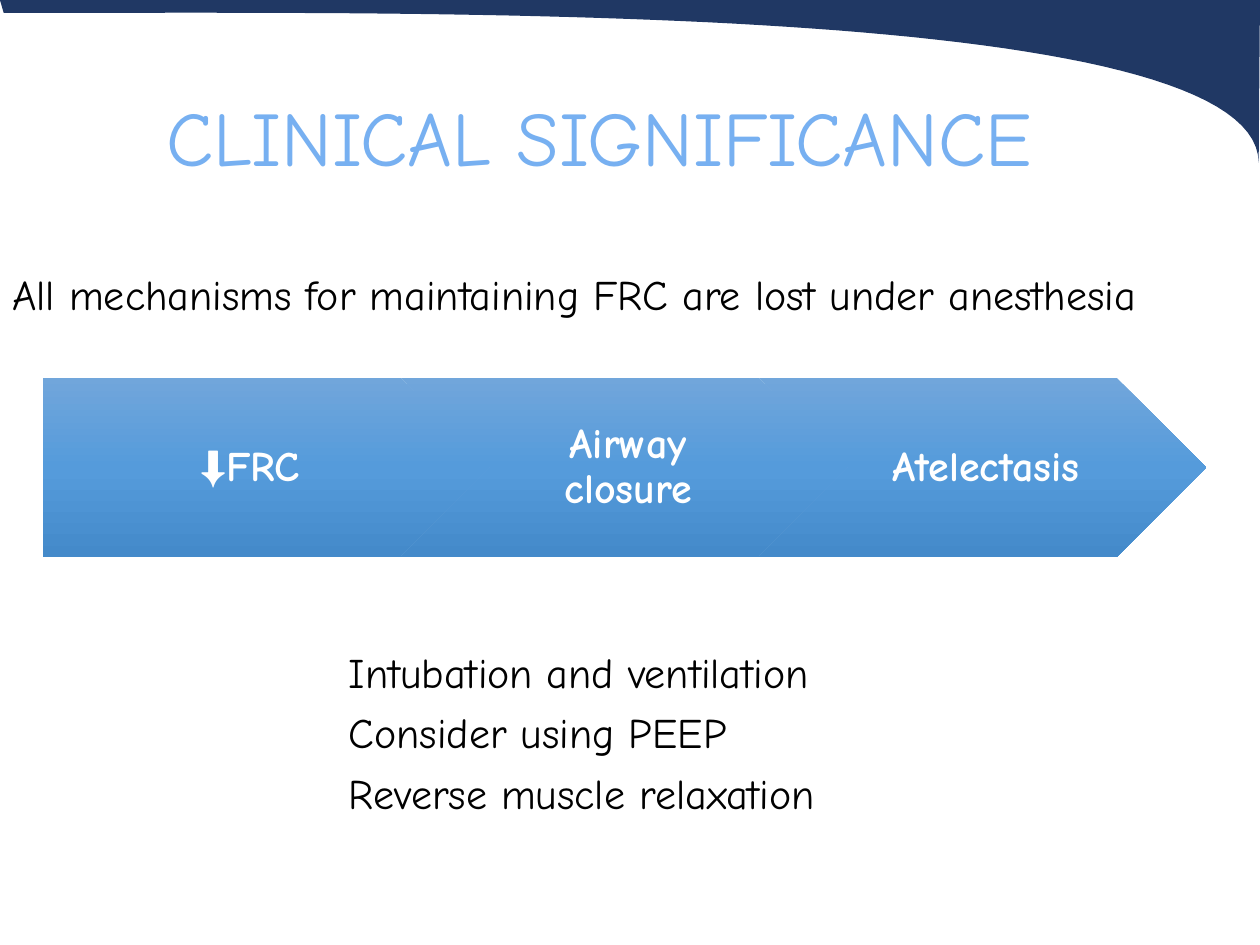
from copy import deepcopy

from pptx import Presentation
from pptx import util as u
from pptx.dml.color import RGBColor
from pptx.enum import shapes, text
from pptx.oxml.ns import qn

FONT = "Comic Neue"
NAVY, SKY, BLACK, WHITE = "203864", "77B0F1", "000000", "FFFFFF"
GRADIENT = [(0, "71A6DB"), (0.5, "559BDB"), (1, "448ACA")]


def colour(value):
    return RGBColor.from_string(value)


def set_attributes(target, values):
    for name, value in values.items():
        setattr(target, name, value)


def add_span(para, words, size, ink, font=FONT, bold=False):
    span = para.add_run()
    span.text = words
    set_attributes(span.font, {"name": font, "size": u.Pt(size), "bold": bold})
    span.font.color.rgb = colour(ink)


def add_lines(page, box, lines, size=24, ink=BLACK, spacing=1.0,
              anchor=text.MSO_ANCHOR.TOP):
    """Place left-aligned paragraphs in a text box."""
    frame = page.shapes.add_textbox(*map(u.Pt, box)).text_frame
    set_attributes(frame, {"word_wrap": True, "vertical_anchor": anchor})
    for index, line in enumerate(lines):
        para = frame.add_paragraph() if index else frame.paragraphs[0]
        para.line_spacing = spacing
        add_span(para, line, size, ink)
    return frame


def add_swoosh(page, box):
    """Draw the corner band, with its lower edge along a cubic curve."""
    left, top, width, height = box
    controls = [(0.999, 1), (0.998, 0), (0.336, 0.08), (0.003, 0.08)]
    steps = 60
    edge = []
    for step in range(steps + 1):
        t = step / steps
        weights = [(1 - t) ** 3, 3 * t * (1 - t) ** 2, 3 * t * t * (1 - t), t ** 3]
        x, y = (sum(w * point[axis] for w, point in zip(weights, controls))
                for axis in (0, 1))
        edge.append((u.Pt(left + x * width), u.Pt(top + y * height)))
    builder = page.shapes.build_freeform(u.Pt(left), u.Pt(top))
    builder.add_line_segments([(u.Pt(left + width), u.Pt(top))] + edge, close=True)
    band = builder.convert_to_shape()
    band.shadow.inherit = False
    band.fill.solid()
    band.fill.fore_color.rgb = colour(NAVY)
    band.line.fill.background()


def add_title(page, box, words):
    frame = add_lines(page, box, [words], size=44, ink=SKY, spacing=0.9,
                      anchor=text.MSO_ANCHOR.MIDDLE)
    frame.margin_left = u.Pt(45.4)


def fill_gradient(shape):
    shape.fill.gradient()
    shape.fill.gradient_angle = 270
    stop_list = shape._element.spPr.find(".//" + qn("a:gsLst"))
    stop_list.append(deepcopy(stop_list[0]))
    for stop, (position, value) in zip(shape.fill.gradient_stops, GRADIENT):
        stop.position = position
        stop.color.rgb = colour(value)


def add_process(page, box, steps):
    """Chain a pentagon and chevrons, each overlapping a fifth of the one before."""
    left, top, width, height = box
    step_width = width / (1 + 0.8 * (len(steps) - 1))
    for index, spans in enumerate(steps):
        kind = shapes.MSO_SHAPE.CHEVRON if index else shapes.MSO_SHAPE.PENTAGON
        arrow = page.shapes.add_shape(
            kind, u.Pt(left + index * 0.8 * step_width), u.Pt(top),
            u.Pt(step_width), u.Pt(height))
        arrow.shadow.inherit = False
        fill_gradient(arrow)
        arrow.line.fill.background()
        frame = arrow.text_frame
        set_attributes(frame, {
            "word_wrap": True, "vertical_anchor": text.MSO_ANCHOR.MIDDLE,
            "margin_left": u.Pt(7.2 if index else 10), "margin_right": u.Pt(3),
            "margin_top": u.Pt(5), "margin_bottom": u.Pt(5)})
        para = frame.paragraphs[0]
        set_attributes(para, {"alignment": text.PP_ALIGN.CENTER, "line_spacing": 0.9})
        for words, font in spans:
            add_span(para, words, 24, WHITE, font, bold=True)


def main():
    deck = Presentation()
    set_attributes(deck, {"slide_width": u.Pt(720), "slide_height": u.Pt(540)})
    page = deck.slides.add_slide(deck.slide_layouts[6])

    # Heading
    add_swoosh(page, (0, 0, 720, 93))
    add_title(page, (49.5, 28.8, 621, 104.4), "CLINICAL SIGNIFICANCE")

    # Mechanism and its consequences
    add_lines(page, (0, 149.8, 708, 36.7),
              ["All mechanisms for maintaining FRC are lost under anesthesia"])
    add_process(page, (24.5, 216, 664.8, 102.2), [
        [("⬇", "Arial"), ("FRC", FONT)],
        [("Airway closure", FONT)],
        [("Atelectasis", FONT)],
    ])

    # Management
    add_lines(page, (192.2, 360, 372, 111), [
        "Intubation and ventilation",
        "Consider using PEEP",
        "Reverse muscle relaxation",
    ], spacing=1.2)

    deck.save("out.pptx")


if __name__ == "__main__":
    main()
